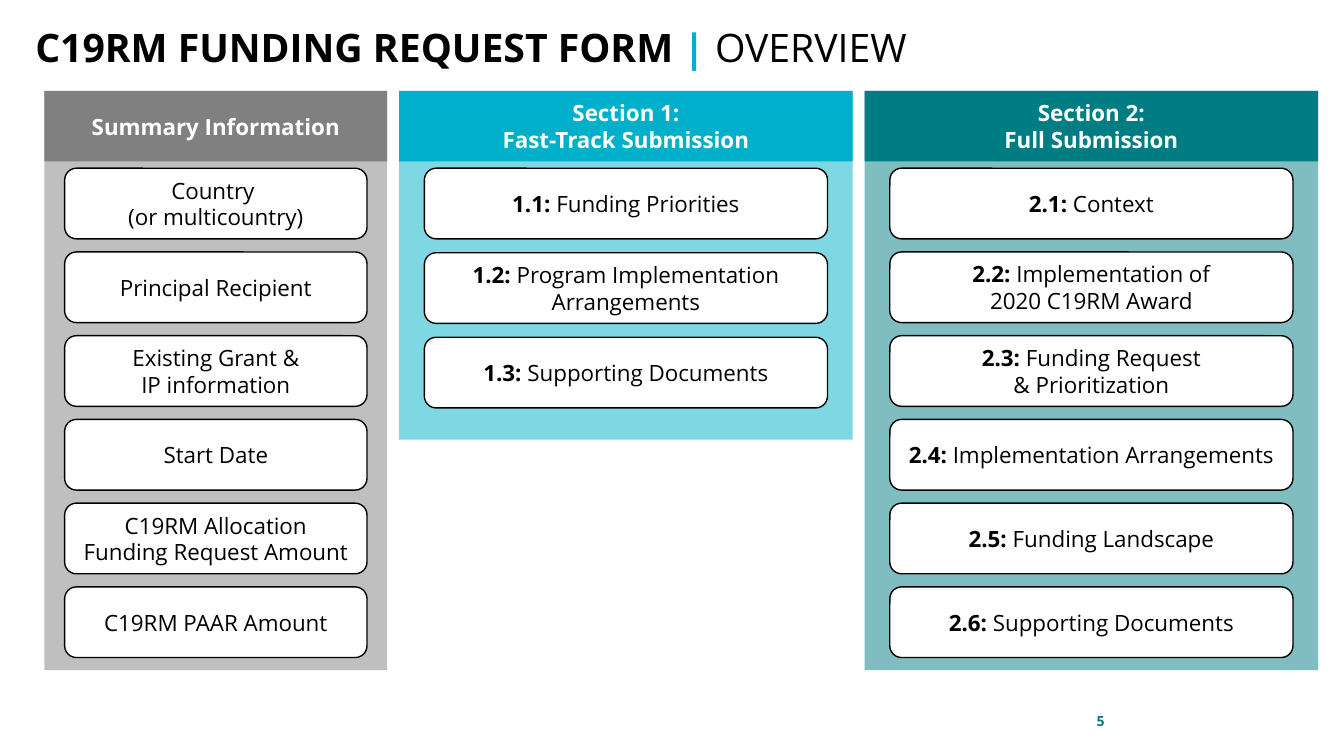
import pptx
import pptx.util
import pptx.dml.color
import pptx.enum.shapes
import pptx.enum.text
import lxml.etree

Cm, Pt = pptx.util.Cm, pptx.util.Pt
SHAPE = pptx.enum.shapes.MSO_SHAPE
ALIGN = pptx.enum.text.PP_ALIGN
ANCHOR = pptx.enum.text.MSO_ANCHOR

COLORS = {"black": "000000", "white": "FFFFFF", "gray": "808080",
          "cyan": "00B0CA", "teal": "007D82"}
FONT = "Open Sans"

TITLE = [("C19RM FUNDING REQUEST FORM ", True, "black"),
         ("| ", True, "cyan"), ("OVERVIEW", False, "black")]
PAGE = "5"

# Each box is (number, lines); lengths are in centimetres.
COLUMNS = [
    {"head": ["Summary Information"], "color": "gray",
     "width": 8.64, "height": 14.6, "box": 7.62, "step": 2.11,
     "items": [("", ["Country ", "(or multicountry)"]),
               ("", ["Principal Recipient"]),
               ("", ["Existing Grant &", "IP information"]),
               ("", ["Start Date"]),
               ("", ["C19RM Allocation", "Funding Request Amount"]),
               ("", ["C19RM PAAR Amount"])]},
    {"head": ["Section 1:", "Fast-Track Submission"], "color": "cyan",
     "width": 11.43, "height": 8.79, "box": 10.16, "step": 2.13,
     "items": [("1.1: ", ["Funding Priorities"]),
               ("1.2: ", ["Program Implementation", "Arrangements"]),
               ("1.3: ", ["Supporting Documents"])]},
    {"head": ["Section 2:", "Full Submission"], "color": "teal",
     "width": 11.43, "height": 14.6, "box": 10.16, "step": 2.11,
     "items": [("2.1: ", ["Context"]),
               ("2.2: ", ["Implementation of", "2020 C19RM Award"]),
               ("2.3: ", ["Funding Request", "& Prioritization"]),
               ("2.4: ", ["Implementation Arrangements"]),
               ("2.5: ", ["Funding Landscape"]),
               ("2.6: ", ["Supporting Documents"])]},
]
LEFT, TOP, GAP = 1.12, 2.29, 0.3
ROW, FIRST = 1.78, 4.24


def paint(name):
    return pptx.dml.color.RGBColor.from_string(COLORS[name])


def write(shape, lines, size, align=ALIGN.CENTER, anchor=ANCHOR.MIDDLE):
    """Fill the shape with lines, each a list of (text, bold, color) runs."""
    frame = shape.text_frame
    frame.word_wrap = True
    frame.vertical_anchor = anchor
    frame.margin_left = frame.margin_right = 0
    frame.margin_top = frame.margin_bottom = 0
    for i, runs in enumerate(lines):
        para = frame.paragraphs[0] if i == 0 else frame.add_paragraph()
        para.alignment = align
        for text, bold, color in runs:
            run = para.add_run()
            run.text = text
            run.font.name = FONT
            run.font.size = Pt(size)
            run.font.bold = bold
            run.font.color.rgb = paint(color)


def block(slide, kind, x, y, w, h, fill, line=None):
    shape = slide.shapes.add_shape(kind, Cm(x), Cm(y), Cm(w), Cm(h))
    shape.shadow.inherit = False
    shape.fill.solid()
    shape.fill.fore_color.rgb = paint(fill)
    if line:
        shape.line.color.rgb = paint(line)
        shape.line.width = Pt(1)
    else:
        shape.line.fill.background()
    return shape


def fade(shape, percent):
    """Set the opacity of a solid fill."""
    tag = pptx.oxml.ns.qn("a:srgbClr")
    color = next(shape.fill._xPr.iter(tag))
    alpha = lxml.etree.SubElement(color, pptx.oxml.ns.qn("a:alpha"))
    alpha.set("val", str(percent * 1000))


def column(slide, x, col):
    width, color = col["width"], col["color"]
    panel = block(slide, SHAPE.RECTANGLE, x, TOP, width, col["height"], color)
    fade(panel, 50)
    head = block(slide, SHAPE.RECTANGLE, x, TOP, width, ROW, color)
    write(head, [[(text, True, "white")] for text in col["head"]], 16)
    inset = (width - col["box"]) / 2
    for i, (number, texts) in enumerate(col["items"]):
        box = block(slide, SHAPE.ROUNDED_RECTANGLE, x + inset,
                    FIRST + i * col["step"], col["box"], ROW,
                    "white", "black")
        lines = [[(text, False, "black")] for text in texts]
        if number:
            lines[0].insert(0, (number, True, "black"))
        write(box, lines, 16)


def main():
    deck = pptx.Presentation()
    deck.slide_width, deck.slide_height = Cm(33.87), Cm(19.05)
    slide = deck.slides.add_slide(deck.slide_layouts[6])

    page = slide.shapes.add_textbox(Cm(23.93), Cm(17.65), Cm(7.62), Cm(1.02))
    write(page, [[(PAGE, True, "teal")]], 10)

    x = LEFT
    for col in COLUMNS:
        column(slide, x, col)
        x += col["width"] + GAP

    title = slide.shapes.add_textbox(Cm(0.89), Cm(0.81), Cm(30.48), Cm(1.37))
    write(title, [TITLE], 28, ALIGN.LEFT, ANCHOR.TOP)
    title.text_frame.paragraphs[0].line_spacing = 0.8

    deck.save("out.pptx")


if __name__ == "__main__":
    main()
